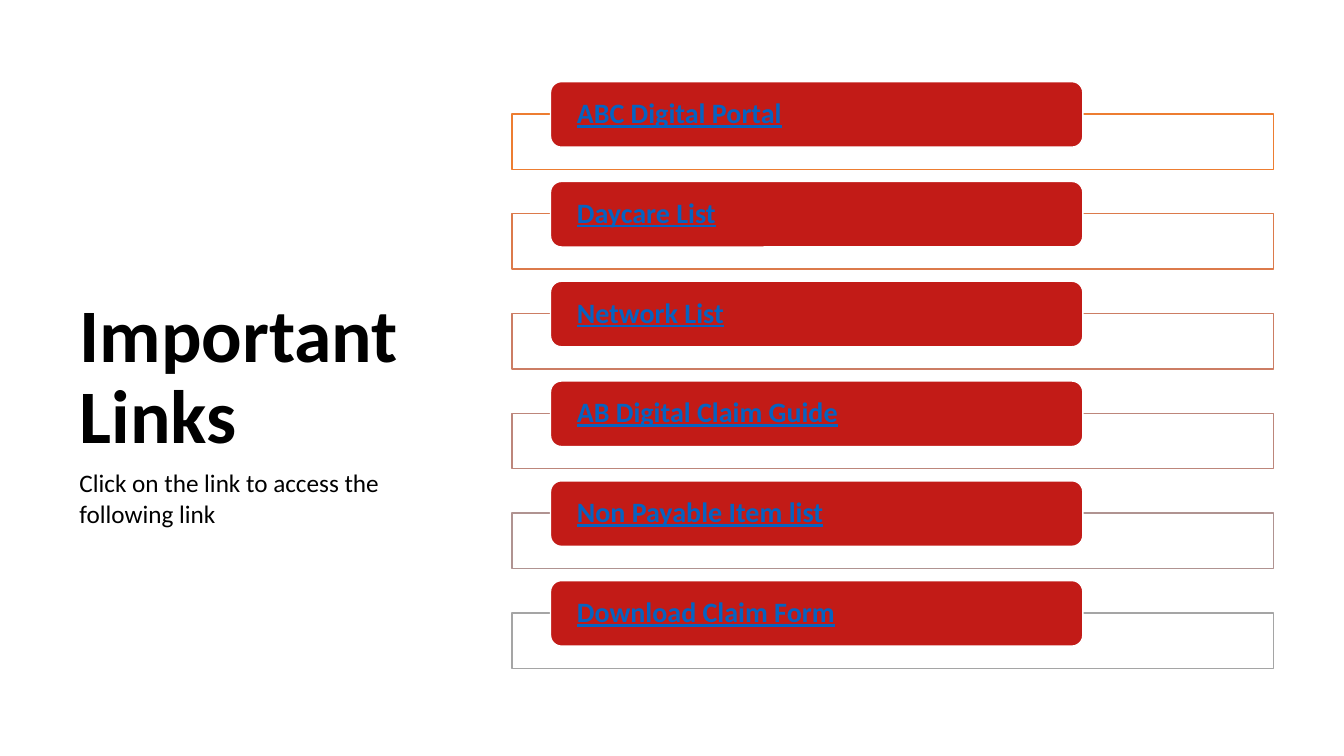
from dataclasses import dataclass

from lxml import etree
from pptx import Presentation
from pptx.dml.color import RGBColor
from pptx.enum.shapes import MSO_SHAPE
from pptx.enum.text import MSO_ANCHOR, MSO_AUTO_SIZE, PP_ALIGN
from pptx.oxml.ns import qn
from pptx.util import Inches, Pt

RECTANGLE = MSO_SHAPE.RECTANGLE
ROUNDED = MSO_SHAPE.ROUNDED_RECTANGLE
MIDDLE = MSO_ANCHOR.MIDDLE
TOP = MSO_ANCHOR.TOP
LEFT = PP_ALIGN.LEFT
NO_AUTOFIT = MSO_AUTO_SIZE.NONE
TITLE_ONLY = 5


@dataclass(frozen=True)
class Theme:
    font: str = "Calibri"
    text: str = "000000"
    paper: str = "FFFFFF"
    button: str = "C21B17"
    link: str = "0563C1"
    title_size: int = 54
    link_size: int = 20
    hint_size: int = 18
    outline: int = 1
    frame_opacity: int = 90


THEME = Theme()
LINKS = [
    ("ABC Digital Portal", "ED7D31"),
    ("Daycare List", "DC7A4B"),
    ("Network List", "CC7D64"),
    ("AB Digital Claim Guide", "BD867B"),
    ("Non Payable Item list", "B09391"),
    ("Download Claim Form", "A5A5A5"),
]
FIRST_BUTTON_TOP = 0.81
ROW_PITCH = 0.99
FRAME_DROP = 0.32


def write_text(box, text, size, color, bold=False, underline=False,
               anchor=MIDDLE, spacing=0.9):
    frame = box.text_frame
    frame.text = text
    frame.word_wrap = True
    frame.auto_size = NO_AUTOFIT
    frame.vertical_anchor = anchor
    para = frame.paragraphs[0]
    para.alignment = LEFT
    para.line_spacing = spacing
    font = para.runs[0].font
    font.name = THEME.font
    font.size = Pt(size)
    font.bold = bold
    font.underline = underline
    font.color.rgb = RGBColor.from_string(color)


def add_panel(page, kind, left, top, width, height, fill, line):
    panel = page.shapes.add_shape(
        kind, Inches(left), Inches(top), Inches(width), Inches(height))
    panel.shadow.inherit = False
    panel.fill.solid()
    panel.fill.fore_color.rgb = RGBColor.from_string(fill)
    panel.line.color.rgb = RGBColor.from_string(line)
    panel.line.width = Pt(THEME.outline)
    return panel


def set_opacity(panel, percent):
    color = panel.fill._xPr.find(qn("a:solidFill"))[0]
    etree.SubElement(color, qn("a:alpha")).set("val", str(percent * 1000))


def add_title(page, text):
    title = page.shapes.title
    title.left, title.top = Inches(0.69), Inches(0.7)
    title.width, title.height = Inches(3.74), Inches(6.11)
    write_text(title, text, THEME.title_size, THEME.text, bold=True)


def add_hint(page, text):
    box = page.shapes.add_textbox(
        Inches(0.69), Inches(4.59), Inches(3.33), Inches(0.71))
    write_text(box, text, THEME.hint_size, THEME.text, anchor=TOP, spacing=1.0)


def add_link_row(page, top, text, accent):
    frame = add_panel(page, RECTANGLE, 5.08, top + FRAME_DROP, 7.55, 0.55,
                      THEME.paper, accent)
    set_opacity(frame, THEME.frame_opacity)
    button = add_panel(page, ROUNDED, 5.46, top, 5.28, 0.65,
                       THEME.button, THEME.paper)
    button.text_frame.margin_left = button.text_frame.margin_right = Inches(0.23)
    write_text(button, text, THEME.link_size, THEME.link,
               bold=True, underline=True)


def main():
    deck = Presentation()
    deck.slide_width, deck.slide_height = Inches(13.33), Inches(7.5)
    page = deck.slides.add_slide(deck.slide_layouts[TITLE_ONLY])
    add_title(page, "Important Links")
    for row, (text, accent) in enumerate(LINKS):
        add_link_row(page, FIRST_BUTTON_TOP + row * ROW_PITCH, text, accent)
    add_hint(page, "Click on the link to access the following link")
    deck.save("out.pptx")


if __name__ == "__main__":
    main()
